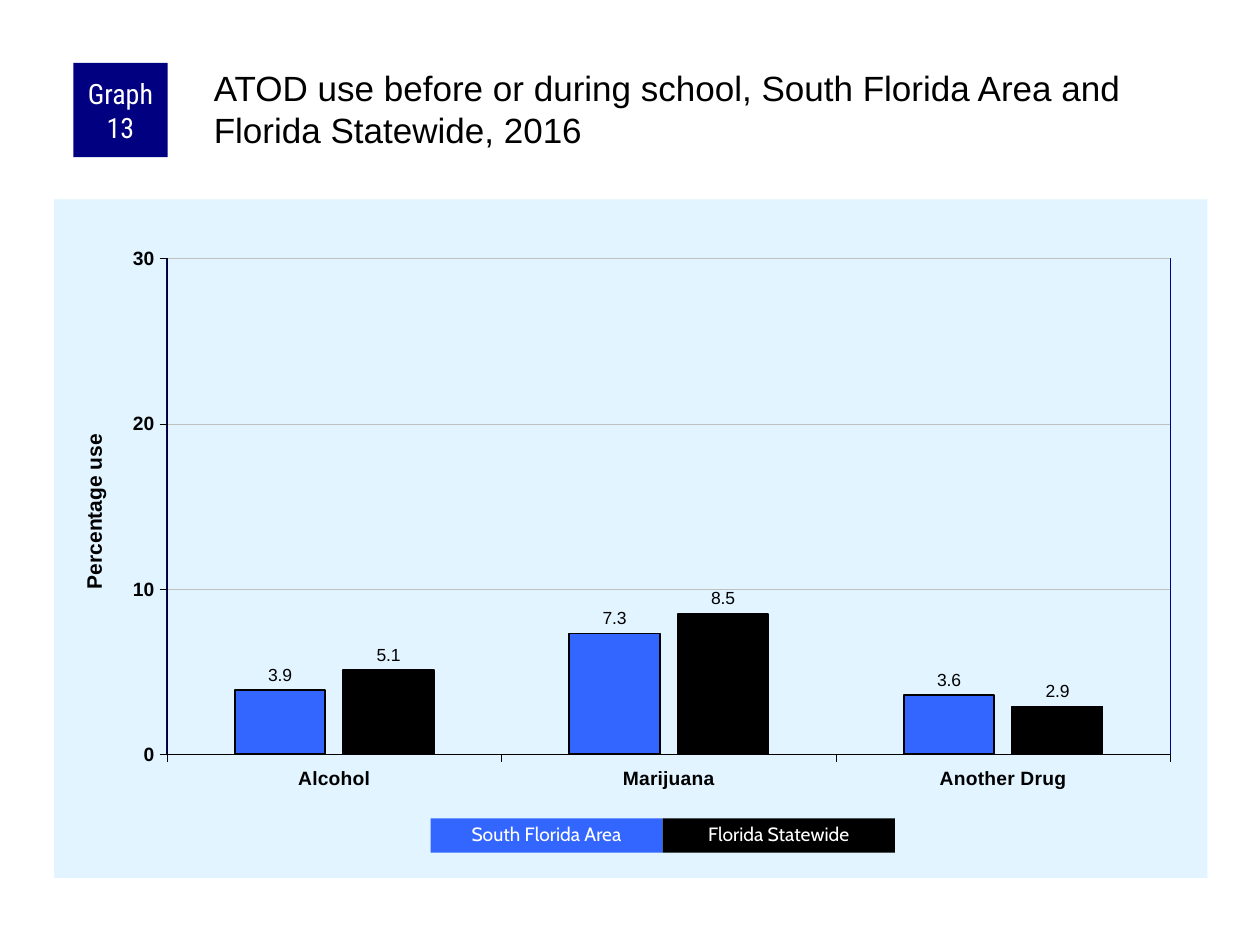
from lxml.etree import SubElement
from pptx import Presentation
from pptx.chart.data import CategoryChartData
from pptx.dml.color import RGBColor
from pptx.enum.chart import XL_CHART_TYPE, XL_LABEL_POSITION, XL_TICK_MARK
from pptx.enum.shapes import MSO_SHAPE
from pptx.enum.text import MSO_ANCHOR, MSO_AUTO_SIZE, PP_ALIGN
from pptx.oxml import parse_xml
from pptx.oxml.ns import nsdecls, qn
from pptx.util import Cm, Pt

NAVY = RGBColor(0x00, 0x00, 0x80)
BLUE = RGBColor(0x33, 0x66, 0xFF)
PALE_BLUE = RGBColor(0xE1, 0xF4, 0xFF)
GRAY = RGBColor(0xC0, 0xC0, 0xC0)
BLACK = RGBColor(0x00, 0x00, 0x00)
WHITE = RGBColor(0xFF, 0xFF, 0xFF)


class GraphSlide:
    """Hold the style and the current slide, and add each kind of element."""

    body_font = "Arial"

    def __init__(self, presentation):
        self.slide = presentation.slides.add_slide(presentation.slide_layouts[5])

    def set_font(self, font, size, color=BLACK, name=body_font, bold=False):
        font.name, font.size, font.bold = name, Pt(size), bold
        font.color.rgb = color

    def set_line(self, line, color, width):
        line.color.rgb = color
        line.width = Pt(width)

    def set_margins(self, text_frame, left, top, right, bottom):
        text_frame.margin_left, text_frame.margin_top = Cm(left), Cm(top)
        text_frame.margin_right, text_frame.margin_bottom = Cm(right), Cm(bottom)

    def add_title(self, text, left, top, width, height):
        shape = self.slide.shapes.title
        shape.left, shape.top, shape.width, shape.height = Cm(left), Cm(top), Cm(width), Cm(height)
        text_frame = shape.text_frame
        text_frame.text = text
        text_frame.word_wrap = True
        text_frame.auto_size = MSO_AUTO_SIZE.NONE
        text_frame.vertical_anchor = MSO_ANCHOR.TOP
        self.set_margins(text_frame, 0.07, 0.07, 0, 0)
        paragraph = text_frame.paragraphs[0]
        paragraph.alignment = PP_ALIGN.LEFT
        self.set_font(paragraph.runs[0].font, 20)

    def add_box(self, text, left, top, width, height, fill, size, font_name, spacing=1.0):
        shape = self.slide.shapes.add_shape(
            MSO_SHAPE.RECTANGLE, Cm(left), Cm(top), Cm(width), Cm(height))
        shape.shadow.inherit = False
        shape.fill.solid()
        shape.fill.fore_color.rgb = fill
        shape.line.fill.background()
        text_frame = shape.text_frame
        text_frame.text = text
        text_frame.word_wrap = True
        text_frame.vertical_anchor = MSO_ANCHOR.MIDDLE
        self.set_margins(text_frame, 0.13, 0, 0.13, 0)
        paragraph = text_frame.paragraphs[0]
        paragraph.alignment = PP_ALIGN.CENTER
        paragraph.line_spacing = spacing
        self.set_font(paragraph.runs[0].font, size, WHITE, font_name)

    def place(self, element, index, **settings):
        for layout in element.findall(qn("c:layout")):
            element.remove(layout)
        layout = parse_xml(f"<c:layout {nsdecls('c')}><c:manualLayout/></c:layout>")
        for name, value in settings.items():
            SubElement(layout[0], qn(f"c:{name}")).set("val", str(value))
        element.insert(index, layout)

    def style_axis(self, axis):
        axis.major_tick_mark = XL_TICK_MARK.OUTSIDE
        axis.minor_tick_mark = XL_TICK_MARK.NONE
        self.set_font(axis.tick_labels.font, 11, bold=True)
        self.set_line(axis.format.line, BLACK, 0.25)

    def style_value_axis(self, axis, title, maximum, step):
        self.style_axis(axis)
        axis.minimum_scale, axis.maximum_scale, axis.major_unit = 0, maximum, step
        axis.tick_labels.number_format = "0"
        axis.tick_labels.number_format_is_linked = False
        self.set_line(axis.major_gridlines.format.line, GRAY, 0.25)
        text_frame = axis.axis_title.text_frame
        text_frame.text = title
        self.set_font(text_frame.paragraphs[0].runs[0].font, 12, bold=True)
        self.place(axis.axis_title._element, 1, xMode="edge", yMode="edge", x=0.02, y=0.34)

    def style_series(self, series, color):
        series.format.fill.solid()
        series.format.fill.fore_color.rgb = color
        self.set_line(series.format.line, BLACK, 1)
        labels = series.data_labels
        labels.show_value = True
        labels.number_format, labels.number_format_is_linked = "0.0", False
        labels.position = XL_LABEL_POSITION.OUTSIDE_END
        self.set_font(labels.font, 10)

    def add_chart(self, categories, groups, left, top, width, height):
        data = CategoryChartData(number_format="0.0")
        data.categories = categories
        for name, values, _ in groups:
            data.add_series(name, values)
        chart = self.slide.shapes.add_chart(
            XL_CHART_TYPE.COLUMN_CLUSTERED, Cm(left), Cm(top), Cm(width), Cm(height), data).chart
        self.set_font(chart.font, 11.5)
        chart.has_title = chart.has_legend = False
        plot = chart.plots[0]
        plot.gap_width, plot.overlap, plot.vary_by_categories = 150, -20, False
        for series, (_, _, color) in zip(plot.series, groups):
            self.style_series(series, color)
        self.style_axis(chart.category_axis)
        self.style_value_axis(chart.value_axis, "Percentage use", 30, 10)
        chart_element = chart._chartSpace.find(qn("c:chart"))
        plot_area = chart_element.find(qn("c:plotArea"))
        self.place(plot_area, 0, layoutTarget="inner", xMode="edge", yMode="edge",
                   x=0.098, y=0.087, w=0.87, h=0.731)
        plot_area.append(parse_xml(
            f'<c:spPr {nsdecls("c", "a")}><a:noFill/><a:ln w="{Pt(1)}"><a:solidFill>'
            f'<a:srgbClr val="{NAVY}"/></a:solidFill></a:ln></c:spPr>'))
        chart_element.addnext(parse_xml(
            f'<c:spPr {nsdecls("c", "a")}><a:solidFill><a:srgbClr val="{PALE_BLUE}"/>'
            '</a:solidFill><a:ln><a:noFill/></a:ln></c:spPr>'))


def main():
    presentation = Presentation()
    presentation.slide_width, presentation.slide_height = Cm(25.4), Cm(19.05)
    region = "South Florida Area"
    groups = [
        (region, (3.9, 7.3, 3.6), BLUE),
        ("Florida Statewide", (5.1, 8.5, 2.9), BLACK),
    ]
    graph = GraphSlide(presentation)
    graph.add_chart(["Alcohol", "Marijuana", "Another Drug"], groups, 1.09, 4.02, 23.25, 13.68)
    graph.add_box("Graph 13", 1.48, 1.27, 1.9, 1.9, NAVY, 16, "Roboto Condensed")
    graph.add_title(f"ATOD use before or during school, {region} and Florida Statewide, 2016",
                    4.24, 1.27, 20.12, 2.11)
    legend_width = 4.68
    for index, (name, _, color) in enumerate(groups):
        graph.add_box(name, 8.68 + index * legend_width, 16.5, legend_width, 0.69,
                      color, 11, "Cabin", 0.9)
    presentation.save("out.pptx")


if __name__ == "__main__":
    main()
